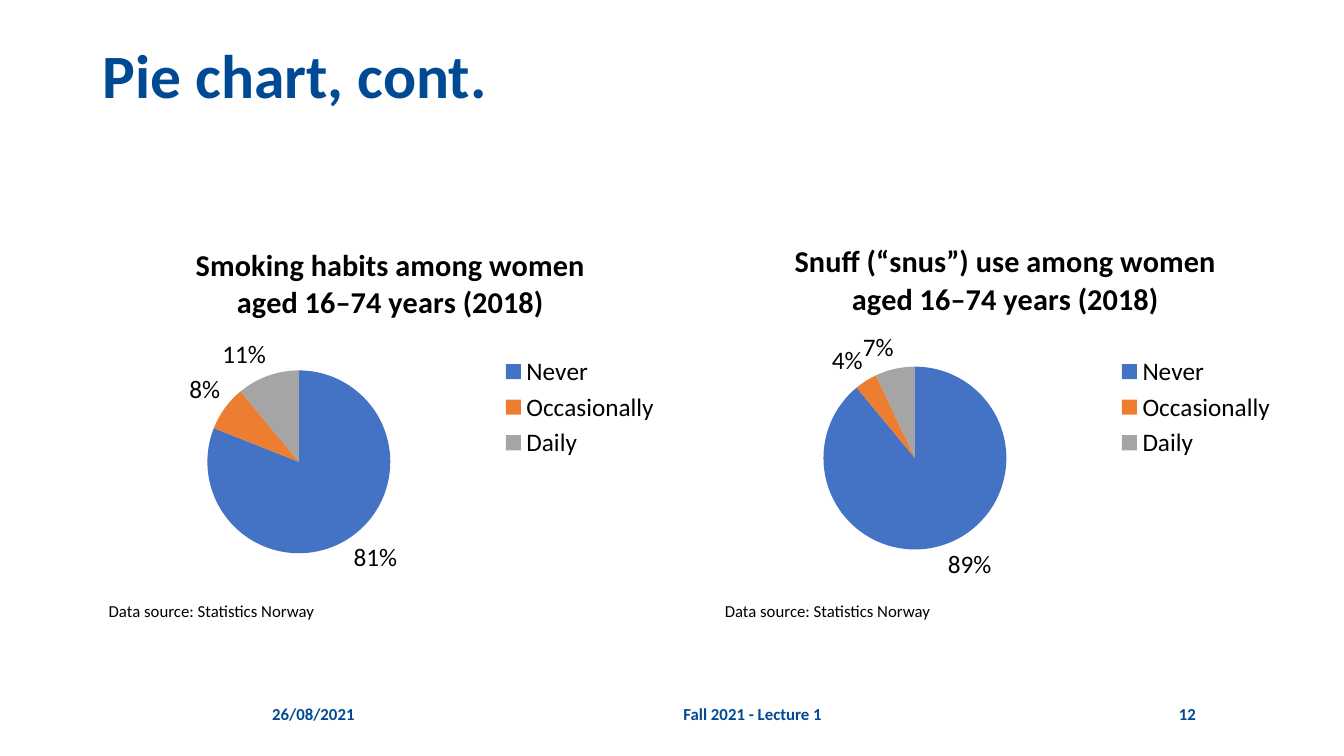
import pptx
import pptx.util
import pptx.chart.data
import pptx.dml.color
import pptx.enum.chart
import pptx.enum.text
from lxml import etree

THEME = {
    "font": "Calibri", "blue": "004A93", "black": "000000",
    "slices": ["4472C4", "ED7D31", "A5A5A5"],
    "heading": 44, "chart_title": 21.6, "chart": 18, "small": 12,
}
WIDTH, HEIGHT = 13.33, 7.5
HEADING = "Pie chart, cont."
SOURCE = "Data source: Statistics Norway"
HABITS = ["Never", "Occasionally", "Daily"]
# title, series name, shares, title corner and pie frame as shares of the chart
PIES = [
    ("Smoking habits among women aged 16–74 years (2018)",
     "Smoking habits among women aged 16–74 years (2018)",
     [0.81, 0.08, 0.11], (0.16, 0.05), (0.19, 0.4, 0.32, 0.49)),
    ("Snuff (“snus”) use among women aged 16–74 years (2018)",
     "Series 1",
     [0.89, 0.04, 0.07], (0.13, 0.04), (0.19, 0.39, 0.32, 0.49)),
]
ALIGN = pptx.enum.text.PP_ALIGN
# text, left, width, alignment
FOOTER = [
    ("26/08/2021", 2.6, 1.31, ALIGN.LEFT),
    ("Fall 2021 - Lecture 1", 4.07, 6.79, ALIGN.CENTER),
    ("12", 11.02, 0.94, ALIGN.RIGHT),
]
FOOTER_TOP, FOOTER_HEIGHT = 6.88, 0.4
COLUMN_LEFT, COLUMN_STEP = 0.98, 6.11
CHART_TOP, CHART_WIDTH, CHART_HEIGHT = 2.17, 5.67, 3.74


def inches(*lengths):
    return [pptx.util.Inches(length) for length in lengths]


def style(font, size, color, bold=False):
    font.name = THEME["font"]
    font.size = pptx.util.Pt(size)
    font.bold = bold
    font.color.rgb = pptx.dml.color.RGBColor.from_string(color)


def add_text(slide, text, box, size, color, bold=False, align=ALIGN.LEFT,
             anchor=pptx.enum.text.MSO_ANCHOR.TOP, wrap=True):
    frame = slide.shapes.add_textbox(*inches(*box)).text_frame
    frame.word_wrap = wrap
    frame.vertical_anchor = anchor
    frame.text = text
    paragraph = frame.paragraphs[0]
    paragraph.alignment = align
    style(paragraph.runs[0].font, size, color, bold)
    return paragraph


def place(parent, index, shares, inner=False):
    """Fix a chart part at x, y and optionally w, h, as shares of the chart."""
    namespace = etree.QName(parent).namespace
    tag = "{%s}" % namespace
    for old in parent.findall(tag + "layout"):
        parent.remove(old)
    layout = etree.Element(tag + "layout")
    manual = etree.SubElement(layout, tag + "manualLayout")
    if inner:
        etree.SubElement(manual, tag + "layoutTarget", val="inner")
    for side in "xy":
        etree.SubElement(manual, tag + side + "Mode", val="edge")
    for side, share in zip("xywh", shares):
        etree.SubElement(manual, tag + side, val=str(share))
    parent.insert(index, layout)


def add_pie(slide, left, title, series_name, shares, title_corner, pie_frame):
    data = pptx.chart.data.CategoryChartData(number_format="0%")
    data.categories = HABITS
    data.add_series(series_name, shares)
    chart = slide.shapes.add_chart(
        pptx.enum.chart.XL_CHART_TYPE.PIE,
        *inches(left, CHART_TOP, CHART_WIDTH, CHART_HEIGHT), data).chart
    style(chart.font, THEME["chart"], THEME["black"])

    chart.has_title = True
    heading = chart.chart_title.text_frame
    heading.text = title
    style(heading.paragraphs[0].runs[0].font, THEME["chart_title"],
          THEME["black"], True)
    chart.chart_title.include_in_layout = False
    place(heading._txBody.getparent().getparent(), 1, title_corner)

    chart.has_legend = True
    chart.legend.position = pptx.enum.chart.XL_LEGEND_POSITION.RIGHT
    chart.legend.include_in_layout = False

    plot = chart.plots[0]
    plot.vary_by_categories = True
    place(plot._element.getparent(), 0, pie_frame, inner=True)
    plot.has_data_labels = True
    labels = plot.data_labels
    labels.show_value = True
    labels.show_percentage = False
    labels.number_format = "0%"
    labels.number_format_is_linked = False
    labels.position = pptx.enum.chart.XL_LABEL_POSITION.OUTSIDE_END
    style(labels.font, THEME["chart"], THEME["black"])
    for index, color in enumerate(THEME["slices"]):
        fill = plot.series[0].points[index].format.fill
        fill.solid()
        fill.fore_color.rgb = pptx.dml.color.RGBColor.from_string(color)


def main():
    deck = pptx.Presentation()
    deck.slide_width, deck.slide_height = inches(WIDTH, HEIGHT)
    slide = deck.slides.add_slide(deck.slide_layouts[6])

    heading = add_text(slide, HEADING, (0.92, 0.4, 11.5, 1.45),
                       THEME["heading"], THEME["blue"], True)
    heading.line_spacing = 0.9
    for column, pie in enumerate(PIES):
        left = COLUMN_LEFT + column * COLUMN_STEP
        add_pie(slide, left, *pie)
        add_text(slide, SOURCE, (left, CHART_TOP + CHART_HEIGHT, 2.36, 0.39),
                 THEME["small"], THEME["black"], wrap=False)
    for text, left, width, align in FOOTER:
        add_text(slide, text, (left, FOOTER_TOP, width, FOOTER_HEIGHT),
                 THEME["small"], THEME["blue"], True, align,
                 pptx.enum.text.MSO_ANCHOR.MIDDLE)
    deck.save("out.pptx")


if __name__ == "__main__":
    main()
